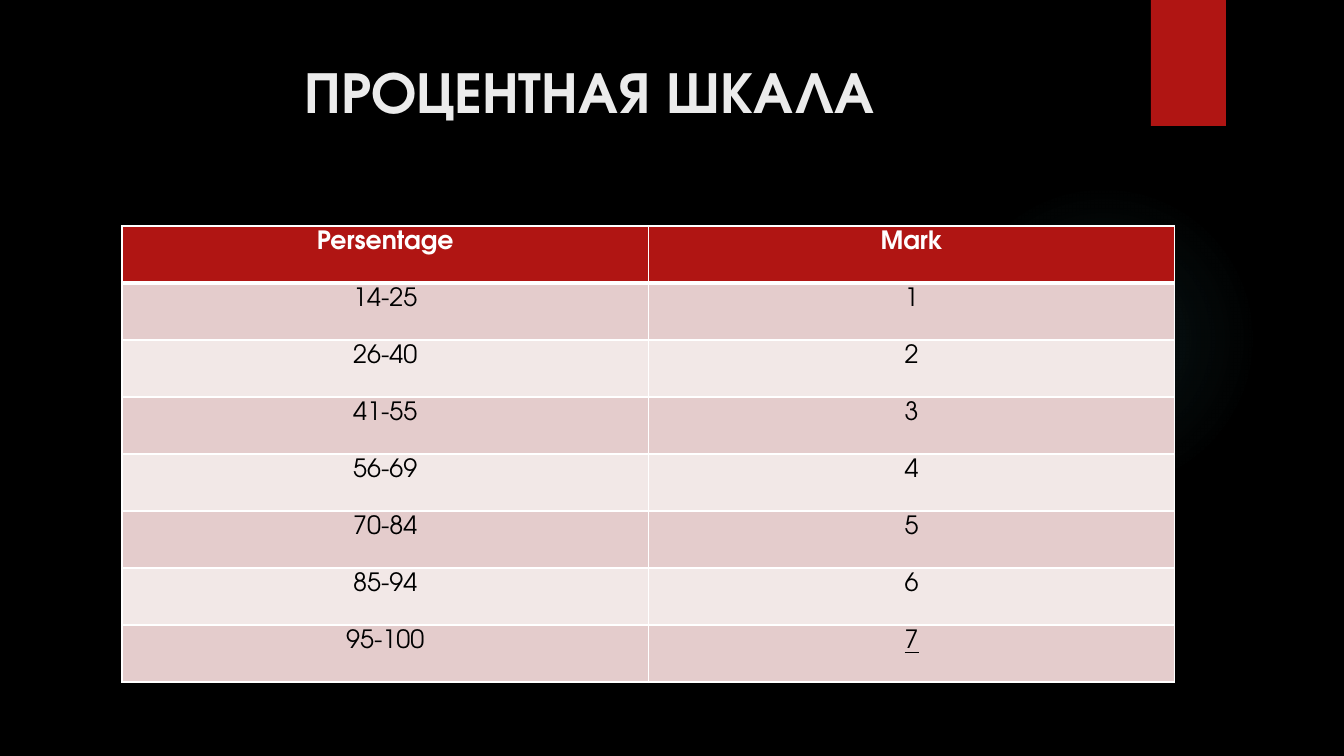
from dataclasses import dataclass

from lxml import etree
from pptx import Presentation
from pptx.dml.color import RGBColor
from pptx.enum.shapes import MSO_SHAPE as Shape
from pptx.enum.text import MSO_ANCHOR as Anchor, MSO_AUTO_SIZE as AutoSize, PP_ALIGN as Align
from pptx.oxml import parse_xml
from pptx.oxml.ns import nsdecls, qn
from pptx.util import Emu, Pt

SCALE = 12192000 / 1344
FONT = "TeX Gyre Adventor"
BLACK = RGBColor(0x00, 0x00, 0x00)
WHITE = RGBColor(0xFF, 0xFF, 0xFF)
OFF_WHITE = RGBColor(0xEB, 0xEB, 0xEB)
RED = RGBColor(0xB0, 0x15, 0x13)
PINK = RGBColor(0xE4, 0xCC, 0xCC)
PALE_PINK = RGBColor(0xF2, 0xE8, 0xE7)
TEAL = RGBColor(0x50, 0xB9, 0xC1)
GLOW_STOPS = [(0, 7), (36, 6), (69, 0)]  # position and opacity, percent
CELL_TOP_MARGIN = 5


@dataclass(frozen=True)
class Box:
    x: int
    y: int
    w: int
    h: int

    def emu(self) -> list[Emu]:
        return [px(v) for v in (self.x, self.y, self.w, self.h)]


@dataclass(frozen=True)
class Grade:
    percentage: str
    mark: str
    underline: bool = False


GLOW = Box(949, 184, 310, 310)
RIBBON = Box(1151, 0, 75, 126)
TITLE = Box(71, 50, 1037, 154)
TABLE = Box(122, 226, 1053, 456)
GRADES = [
    Grade("14-25", "1"),
    Grade("26-40", "2"),
    Grade("41-55", "3"),
    Grade("56-69", "4"),
    Grade("70-84", "5"),
    Grade("85-94", "6"),
    Grade("95-100", "7", underline=True),
]


def px(value: float) -> Emu:
    return Emu(round(value * SCALE))


def write(tf, text: str, color: RGBColor, **font) -> None:
    """Fill a text frame with one centred run."""
    p = tf.paragraphs[0]
    p.alignment = Align.CENTER
    r = p.add_run()
    r.text = text
    r.font.color.rgb = color
    for name, value in {"name": FONT, **font}.items():
        setattr(r.font, name, value)


def add_plain_shape(s, kind: Shape, box: Box, color: RGBColor):
    sp = s.shapes.add_shape(kind, *box.emu())
    sp.shadow.inherit = False
    sp.fill.solid()
    sp.fill.fore_color.rgb = color
    sp.line.fill.background()
    return sp


def add_glow(s) -> None:
    sp = add_plain_shape(s, Shape.OVAL, GLOW, TEAL)
    stops = "".join(
        f'<a:gs pos="{pos * 1000}"><a:srgbClr val="{TEAL}">'
        f'<a:alpha val="{alpha * 1000}"/></a:srgbClr></a:gs>'
        for pos, alpha in GLOW_STOPS
    )
    gradient = parse_xml(
        f'<a:gradFill {nsdecls("a")}><a:gsLst>{stops}</a:gsLst><a:path path="circle">'
        '<a:fillToRect l="50000" t="50000" r="50000" b="50000"/></a:path></a:gradFill>'
    )
    spPr = sp.element.spPr
    spPr.replace(spPr.find(qn("a:solidFill")), gradient)


def set_borders(cell, top: int, bottom: int) -> None:
    """Draw white cell borders, with widths in points."""
    tcPr = cell._tc.get_or_add_tcPr()
    widths = {"lnL": 1, "lnR": 1, "lnT": top, "lnB": bottom}
    for i, (side, width) in enumerate(widths.items()):
        ln = etree.Element(qn(f"a:{side}"), w=str(Pt(width)))
        fill = etree.SubElement(ln, qn("a:solidFill"))
        etree.SubElement(fill, qn("a:srgbClr"), val=str(WHITE))
        tcPr.insert(i, ln)


def fill_cell(cell, text: str, row: int, underline: bool) -> None:
    header = row == 0
    cell.fill.solid()
    cell.fill.fore_color.rgb = RED if header else PINK if row % 2 else PALE_PINK
    cell.margin_top = px(CELL_TOP_MARGIN)
    cell.margin_bottom = 0
    cell.vertical_anchor = Anchor.TOP
    set_borders(cell, top=3 if row == 1 else 1, bottom=3 if header else 1)
    write(cell.text_frame, text, WHITE if header else BLACK,
          size=Pt(18), bold=header, underline=underline)


def add_grade_table(s) -> None:
    rows = [Grade("Persentage", "Mark"), *GRADES]
    table = s.shapes.add_table(len(rows), 2, *TABLE.emu()).table
    for column in table.columns:
        column.width = px(TABLE.w / 2)
    for i, grade in enumerate(rows):
        table.rows[i].height = px(TABLE.h / len(rows))
        fill_cell(table.cell(i, 0), grade.percentage, i, False)
        fill_cell(table.cell(i, 1), grade.mark, i, grade.underline)


def set_title(s) -> None:
    title = s.shapes.title
    title.left, title.top, title.width, title.height = TITLE.emu()
    tf = title.text_frame
    frame = {"word_wrap": True, "auto_size": AutoSize.NONE, "vertical_anchor": Anchor.TOP}
    for name, value in frame.items():
        setattr(tf, name, value)
    write(tf, "ПРОЦЕНТНАЯ ШКАЛА", OFF_WHITE, size=Pt(42), bold=True)


def main() -> None:
    prs = Presentation()
    prs.slide_width, prs.slide_height = px(1344), px(756)
    s = prs.slides.add_slide(prs.slide_layouts[5])
    s.background.fill.solid()
    s.background.fill.fore_color.rgb = BLACK
    add_glow(s)
    add_plain_shape(s, Shape.RECTANGLE, RIBBON, RED)
    set_title(s)
    add_grade_table(s)
    prs.save("out.pptx")


if __name__ == "__main__":
    main()
